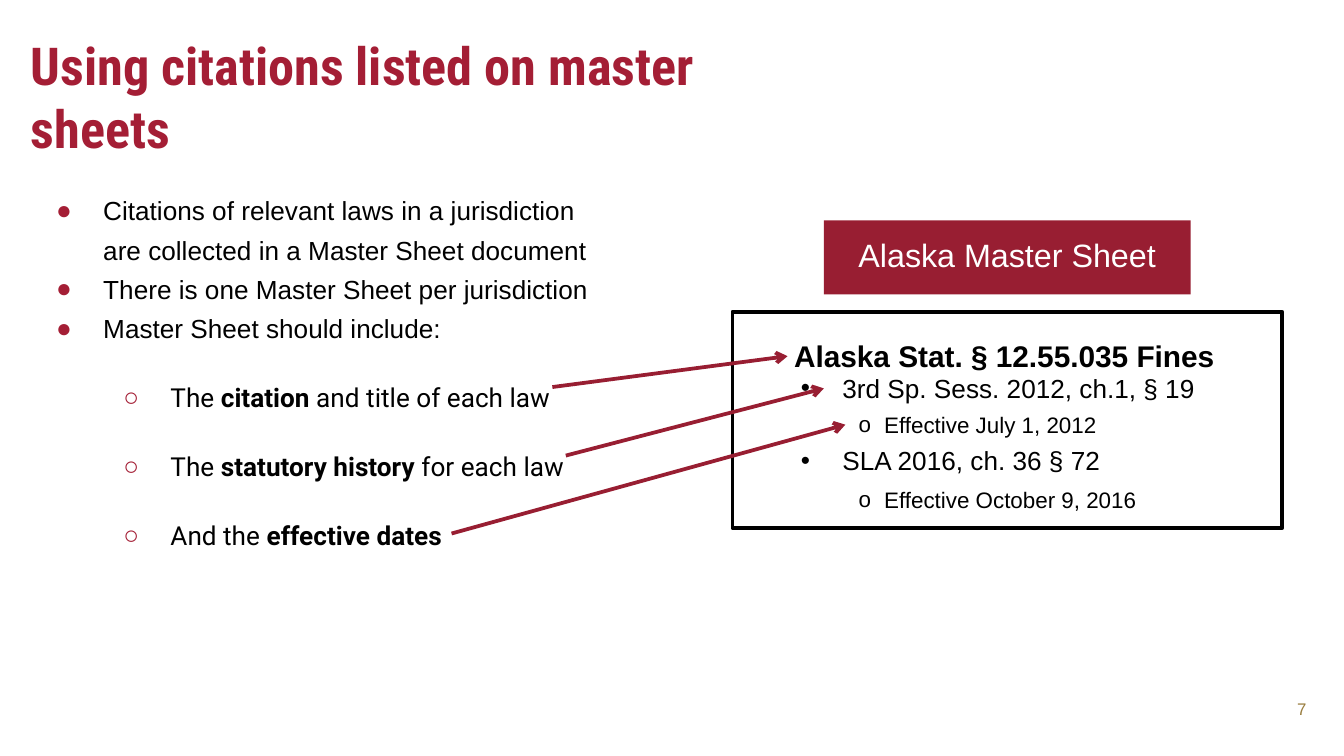
import pptx
import pptx.dml.color
import pptx.enum.shapes
import pptx.enum.text
import pptx.oxml
import pptx.oxml.ns
import pptx.util

RGBColor = pptx.dml.color.RGBColor
Inches = pptx.util.Inches
Pt = pptx.util.Pt

TITLE_RED = RGBColor(0xA4, 0x1E, 0x35)
DARK_RED = RGBColor(0x98, 0x1E, 0x32)
BLACK = RGBColor(0, 0, 0)
WHITE = RGBColor(0xFF, 0xFF, 0xFF)
GOLD = RGBColor(0x9A, 0x7E, 0x40)

TITLE_LINES = ["Using citations listed on master ", "sheets"]
PAGE_NUMBER = "7"
MAIN_POINTS = [
    "Citations of relevant laws in a jurisdiction are collected in a Master Sheet document",
    "There is one Master Sheet per jurisdiction",
    "Master Sheet should include:",
]
# Plain start, bold term, plain end
SHEET_PARTS = [
    ("The ", "citation", " and title of each law"),
    ("The ", "statutory history", " for each law"),
    ("And the ", "effective dates", ""),
]
SHEET_HEADING = "Alaska Master Sheet"
STATUTE = "Alaska Stat. § 12.55.035 Fines"
# Text, top, width
HISTORY = [("3rd Sp. Sess. 2012, ch.1, § 19", 2.72, 3.15), ("SLA 2016, ch. 36 § 72", 3.26, 2.51)]
EFFECTIVE_DATES = [("Effective July 1, 2012", 3.01, 1.99), ("Effective October 9, 2016", 3.57, 2.29)]
ARROWS = [
    ((3.36, 3.97), (6.29, 3.16)),
    ((4.21, 3.39), (6.13, 2.89)),
    ((4.11, 2.88), (5.86, 2.65)),
]


def add_xml(parent, tag, content="", attributes=""):
    namespace = pptx.oxml.ns.nsdecls("a")
    parent.append(pptx.oxml.parse_xml(f"<a:{tag} {namespace} {attributes}>{content}</a:{tag}>"))


def add_text_box(slide, left, top, width, height, margin=0.1, wrap=True):
    box = slide.shapes.add_textbox(Inches(left), Inches(top), Inches(width), Inches(height))
    frame = box.text_frame
    frame.word_wrap = wrap
    frame.margin_left = frame.margin_right = Inches(0.1)
    frame.margin_top = frame.margin_bottom = Inches(margin)
    return frame


def add_run(paragraph, text, size, color, font="Arial", bold=False):
    run = paragraph.add_run()
    run.text = text
    run.font.name = font
    run.font.size = Pt(size)
    run.font.bold = bold
    run.font.color.rgb = color


def set_indent(paragraph, margin, hanging=0):
    properties = paragraph._p.get_or_add_pPr()
    properties.set("marL", str(Inches(margin)))
    properties.set("indent", str(-Inches(hanging)))
    return properties


def set_bullet(paragraph, character, color, margin, hanging):
    properties = set_indent(paragraph, margin, hanging)
    add_xml(properties, "buClr", f'<a:srgbClr val="{color}"/>')
    add_xml(properties, "buFont", attributes='typeface="Arial"')
    add_xml(properties, "buChar", attributes=f'char="{character}"')


def add_page_number(slide):
    frame = add_text_box(slide, 9.38, 5.09, 0.44, 0.37)
    frame.vertical_anchor = pptx.enum.text.MSO_ANCHOR.MIDDLE
    paragraph = frame.paragraphs[0]
    paragraph.alignment = pptx.enum.text.PP_ALIGN.RIGHT
    add_run(paragraph, PAGE_NUMBER, 9, GOLD)


def add_title(slide):
    paragraph = add_text_box(slide, 0.13, 0.15, 9.16, 0.63).paragraphs[0]
    for index, line in enumerate(TITLE_LINES):
        if index:
            paragraph.add_line_break()
        add_run(paragraph, line, 28, TITLE_RED, "Roboto Condensed", True)


def add_body(slide):
    frame = add_text_box(slide, 0.17, 1.29, 4.37, 4.02)
    for index in range(len(MAIN_POINTS) + len(SHEET_PARTS)):
        paragraph = frame.add_paragraph() if index else frame.paragraphs[0]
        paragraph.line_spacing = 1.25
        if index < len(MAIN_POINTS):
            set_bullet(paragraph, "●", TITLE_RED, 0.5, 0.35)
            add_run(paragraph, MAIN_POINTS[index], 14, BLACK)
            continue
        paragraph.level = 1
        paragraph.space_before = Pt(16)
        set_bullet(paragraph, "○", TITLE_RED, 1, 0.35)
        for position, text in enumerate(SHEET_PARTS[index - len(MAIN_POINTS)]):
            if text:
                add_run(paragraph, text, 14, BLACK, "Roboto", position == 1)


def add_rectangle(slide, left, top, width, height):
    shape = slide.shapes.add_shape(
        pptx.enum.shapes.MSO_SHAPE.RECTANGLE,
        Inches(left), Inches(top), Inches(width), Inches(height))
    shape.shadow.inherit = False
    return shape


def add_master_sheet(slide):
    border = add_rectangle(slide, 5.45, 2.32, 4.09, 1.61)
    border.fill.background()
    border.line.color.rgb = BLACK
    border.line.width = Pt(2)

    heading = add_rectangle(slide, 6.13, 1.64, 2.73, 0.55)
    heading.fill.solid()
    heading.fill.fore_color.rgb = DARK_RED
    heading.line.fill.background()
    heading.text_frame.vertical_anchor = pptx.enum.text.MSO_ANCHOR.MIDDLE
    paragraph = heading.text_frame.paragraphs[0]
    paragraph.alignment = pptx.enum.text.PP_ALIGN.CENTER
    paragraph.line_spacing = 0.9
    add_run(paragraph, SHEET_HEADING, 17.3, WHITE)

    paragraph = add_text_box(slide, 5.69, 2.46, 3.5, 0.61, 0.05, False).paragraphs[0]
    set_indent(paragraph, 0.12)
    add_run(paragraph, STATUTE, 16, BLACK, bold=True)

    for entries, left, height, level, character, indent, size in (
        (HISTORY, 5.86, 0.34, 0, "•", 0.31, 14),
        (EFFECTIVE_DATES, 6.29, 0.3, 4, "o", 0.19, 12),
    ):
        for text, top, width in entries:
            paragraph = add_text_box(slide, left, top, width, height, 0.05, False).paragraphs[0]
            paragraph.level = level
            set_bullet(paragraph, character, BLACK, indent, indent)
            add_run(paragraph, text, size, BLACK)


def add_arrow(slide, start, end):
    connector = slide.shapes.add_connector(
        pptx.enum.shapes.MSO_CONNECTOR.STRAIGHT, *map(Inches, start + end))
    connector.line.color.rgb = DARK_RED
    connector.line.width = Pt(2)
    add_xml(connector.line._get_or_add_ln(), "tailEnd", attributes='type="arrow"')
    add_xml(connector._element.spPr, "effectLst")


def main():
    presentation = pptx.Presentation()
    presentation.slide_width = Inches(10)
    presentation.slide_height = presentation.slide_width * 9 // 16
    slide = presentation.slides.add_slide(presentation.slide_layouts[6])

    add_page_number(slide)
    add_title(slide)
    add_body(slide)
    add_master_sheet(slide)
    for start, end in ARROWS:
        add_arrow(slide, start, end)
    presentation.save("out.pptx")


if __name__ == "__main__":
    main()
